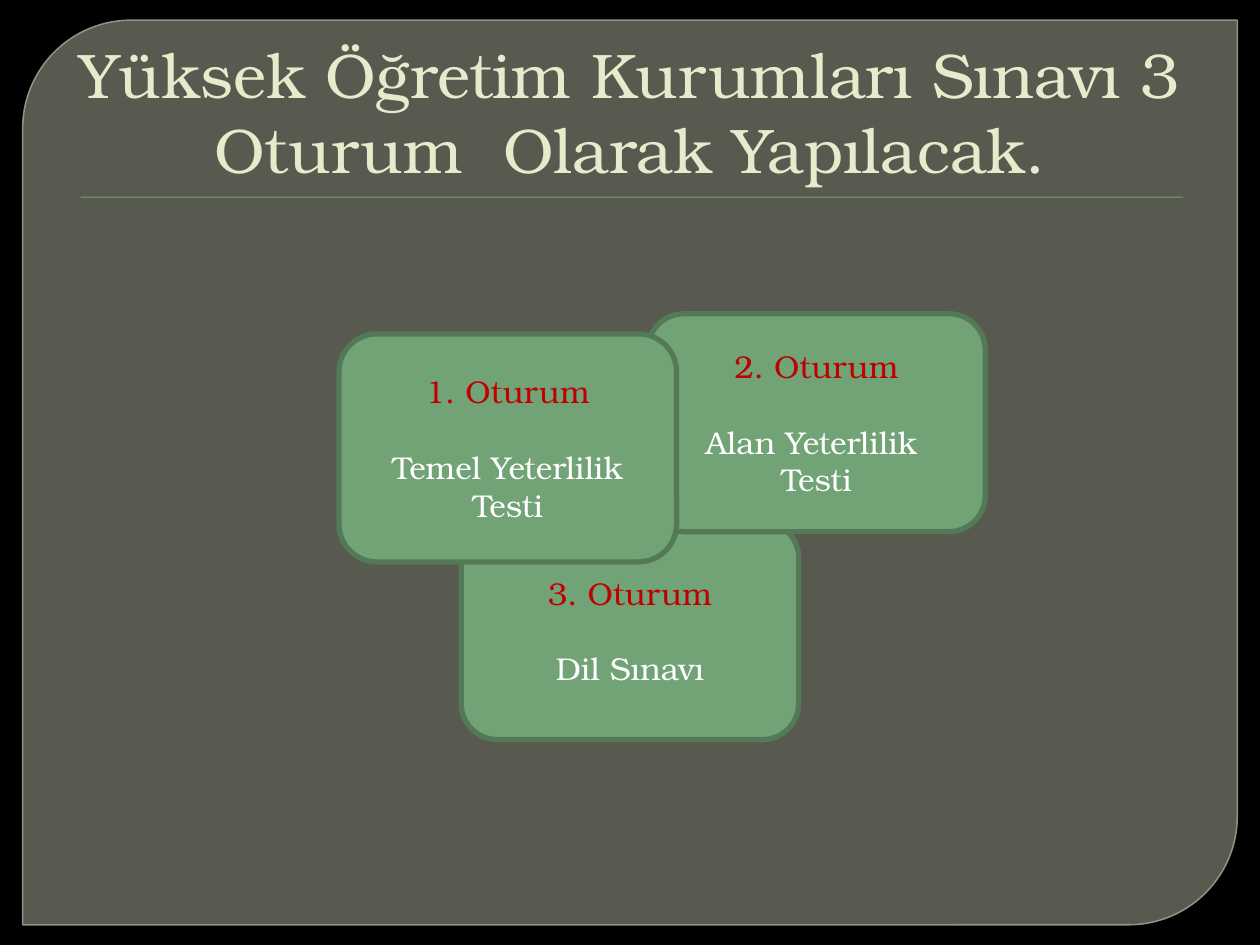
from lxml import etree
from pptx import Presentation
from pptx.dml.color import RGBColor
from pptx.enum import shapes, text
from pptx.oxml import ns
from pptx.util import Inches, Pt

FONT = "TeX Gyre Bonum"
TITLE = "Yüksek Öğretim Kurumları Sınavı 3 Oturum  Olarak Yapılacak."
CARDS = [
    (3.66, 4.14, 1.73, "3. Oturum", "Dil Sınavı"),
    (5.14, 2.49, 1.73, "2. Oturum", "Alan Yeterlilik \vTesti"),
    (2.69, 2.65, 1.81, "1. Oturum", "Temel Yeterlilik Testi"),
]
WIDE = 2.68
KIND = shapes.MSO_SHAPE


def tint(code):
    return RGBColor.from_string(code)


def fade(fill, part):
    color = fill._xPr.find(".//" + ns.qn("a:srgbClr"))
    etree.SubElement(color, ns.qn("a:alpha")).set("val", str(part * 1000))


def block(page, kind, box, fill, line=None, width=0):
    item = page.shapes.add_shape(kind, *map(Inches, box))
    item.shadow.inherit = False
    item.fill.solid()
    item.fill.fore_color.rgb = tint(fill)
    if line:
        item.line.color.rgb = tint(line)
        item.line.width = Pt(width)
    else:
        item.line.fill.background()
    return item


def write(frame, anchor, rows):
    frame.word_wrap = True
    frame.vertical_anchor = anchor
    for i, (words, size, color, gap) in enumerate(rows):
        para = frame.paragraphs[0] if i == 0 else frame.add_paragraph()
        para.text = words
        para.alignment = text.PP_ALIGN.CENTER
        para.space_before = Pt(gap)
        para.font.color.rgb = tint(color)
        look = {"name": FONT, "size": Pt(size)}
        for run in para.runs:
            run.font.color.rgb = tint(color)
            for key, value in look.items():
                setattr(run.font, key, value)


def main():
    deck = Presentation()
    deck.slide_width, deck.slide_height = Inches(10), Inches(7.5)
    page = deck.slides.add_slide(deck.slide_layouts[6])
    page.background.fill.solid()
    page.background.fill.fore_color.rgb = tint("000000")

    panel = block(page, KIND.ROUND_2_DIAG_RECTANGLE,
                  (0.18, 0.16, 9.64, 7.18), "888B7B", "9DA090", 0.87)
    panel.adjustments[0] = 0.12
    panel.adjustments[1] = 0
    fade(panel.fill, 65)
    fade(panel.line.fill, 88)
    block(page, KIND.RECTANGLE, (0.64, 1.56, 8.75, 0.01), "72A376")

    title = page.shapes.add_textbox(*map(Inches, (0.5, 0.28, 9, 1.25)))
    write(title.text_frame, text.MSO_ANCHOR.BOTTOM,
          [(TITLE, 36, "E7EACB", 0)])

    for left, top, high, head, body in CARDS:
        card = block(page, KIND.ROUNDED_RECTANGLE,
                     (left, top, WIDE, high), "72A376", "547957", 3)
        write(card.text_frame, text.MSO_ANCHOR.MIDDLE,
              [(head, 18, "C00000", 0), (body, 18, "FFFFFF", 21.6)])

    deck.save("out.pptx")


if __name__ == "__main__":
    main()
